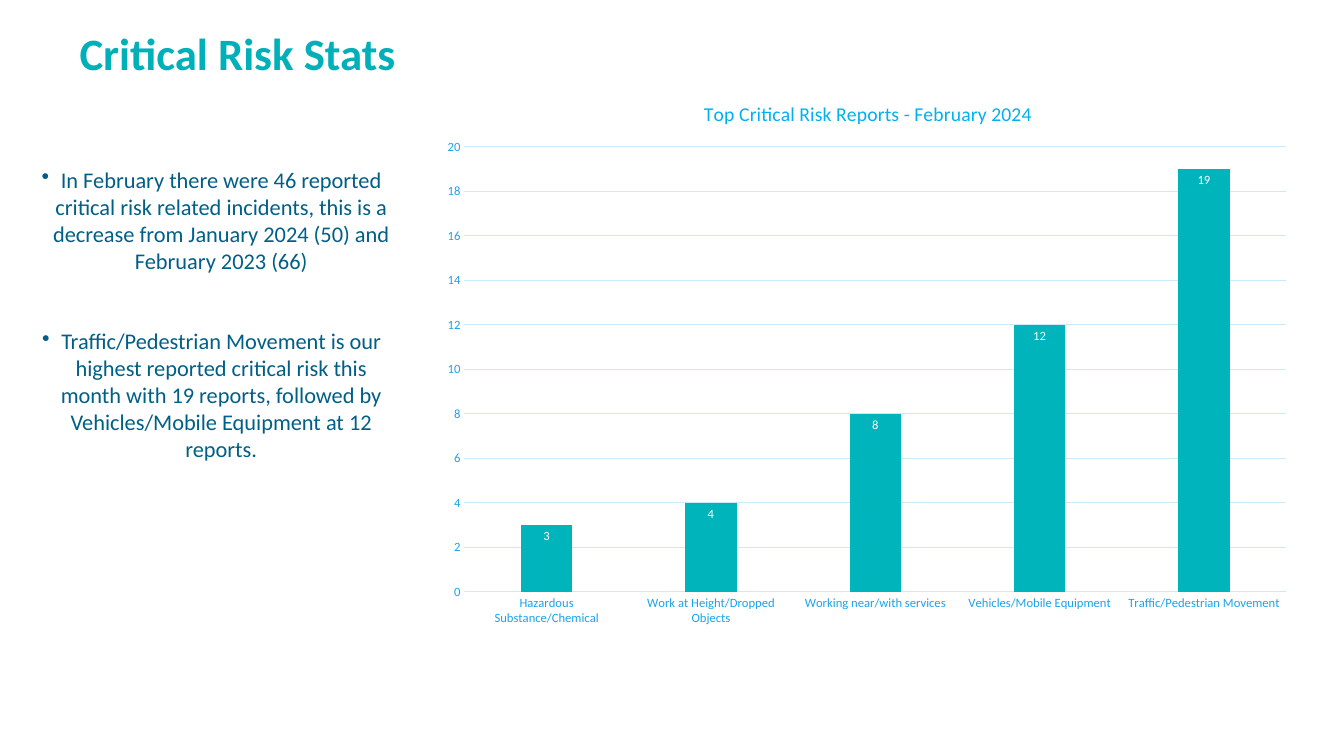
import pptx
import pptx.chart.data
import pptx.dml.color
import pptx.enum.chart
import pptx.enum.text
import pptx.oxml
import pptx.oxml.ns
import pptx.util
from pptx.util import Inches

COLORS = {
    "heading": "00B0B9",
    "body": "005F86",
    "bars": "00B4BC",
    "chart_title": "00B0F0",
    "chart_text": "0A5075",
    "axis_text": "1AA3EB",
    "grid": "CAEAFA",
    "label": "FFFFFF",
}
FONT = "Calibri"


def write(paragraph, text, *, size, color, bold=False, align=None, line=None,
          before=None, bullet_indent=None):
    """Fill a paragraph with one formatted run."""
    if bullet_indent:
        props = paragraph._p.get_or_add_pPr()
        props.set("marL", str(bullet_indent))
        props.set("indent", str(-bullet_indent))
        bullet = pptx.oxml.parse_xml(
            f'<a:buChar {pptx.oxml.ns.nsdecls("a")} char="•"/>')
        props.append(bullet)
    if align is not None:
        paragraph.alignment = align
    if line:
        paragraph.line_spacing = pptx.util.Pt(line)
    if before:
        paragraph.space_before = pptx.util.Pt(before)
    run = paragraph.add_run()
    run.text = text
    style_font(run.font, size, color, bold)


def style_font(font, size, color, bold=False):
    font.name = FONT
    font.size = pptx.util.Pt(size)
    font.bold = bold
    font.color.rgb = pptx.dml.color.RGBColor.from_string(COLORS[color])


presentation = pptx.Presentation()
presentation.slide_width = Inches(13.33)
presentation.slide_height = Inches(7.5)
slide = presentation.slides.add_slide(presentation.slide_layouts[6])

# Heading
heading = slide.shapes.add_textbox(
    Inches(0.69), Inches(0.3), Inches(11.95), Inches(0.93)).text_frame
heading.word_wrap = True
write(heading.paragraphs[0], "Critical Risk Stats", size=32, color="heading",
      bold=True, line=32)

# Findings
findings = slide.shapes.add_textbox(
    Inches(0.22), Inches(1.6), Inches(3.76), Inches(3.06)).text_frame
findings.word_wrap = True
finding_texts = [
    "In February there were 46 reported critical risk related incidents, "
    "this is a decrease from January 2024 (50) and February 2023 (66)",
    "Traffic/Pedestrian Movement is our highest reported critical risk this "
    "month with 19 reports, followed by Vehicles/Mobile Equipment at 12 reports.",
]
for index, finding in enumerate(finding_texts):
    paragraph = findings.add_paragraph() if index else findings.paragraphs[0]
    write(paragraph, finding, size=16, color="body",
          align=pptx.enum.text.PP_ALIGN.CENTER, before=38.5 * index,
          bullet_indent=Inches(0.19))

# Chart of reports by risk
reports = {
    "Hazardous Substance/Chemical": 3,
    "Work at Height/Dropped Objects": 4,
    "Working near/with services": 8,
    "Vehicles/Mobile Equipment": 12,
    "Traffic/Pedestrian Movement": 19,
}
report_data = pptx.chart.data.CategoryChartData()
report_data.categories = list(reports)
report_data.add_series("Series 1", list(reports.values()))
chart = slide.shapes.add_chart(
    pptx.enum.chart.XL_CHART_TYPE.COLUMN_CLUSTERED,
    Inches(4.26), Inches(0.74), Inches(8.67), Inches(5.52), report_data).chart
chart.has_legend = False
style_font(chart.font, 10, "chart_text")
chart.has_title = True
write(chart.chart_title.text_frame.paragraphs[0],
      "Top Critical Risk Reports - February 2024", size=14, color="chart_title")
chart.chart_title.include_in_layout = False

# Axes and gridlines
risk_axis, count_axis = chart.category_axis, chart.value_axis
for axis in (risk_axis, count_axis):
    axis.major_tick_mark = pptx.enum.chart.XL_TICK_MARK.NONE
    axis.minor_tick_mark = pptx.enum.chart.XL_TICK_MARK.NONE
    style_font(axis.tick_labels.font, 9, "axis_text")
count_axis.minimum_scale, count_axis.maximum_scale = 0, 20
count_axis.major_unit = 2
count_axis.format.line.fill.background()
count_axis.has_major_gridlines = True
for rule in (risk_axis.format.line, count_axis.major_gridlines.format.line):
    rule.width = pptx.util.Pt(0.75)
    rule.color.rgb = pptx.dml.color.RGBColor.from_string(COLORS["grid"])

# Bars and their values
bars = chart.plots[0]
bars.vary_by_categories = False
bars.gap_width = 219
bars.overlap = -27
bar_fill = bars.series[0].format.fill
bar_fill.solid()
bar_fill.fore_color.rgb = pptx.dml.color.RGBColor.from_string(COLORS["bars"])
bars.has_data_labels = True
bars.data_labels.show_value = True
bars.data_labels.position = pptx.enum.chart.XL_LABEL_POSITION.INSIDE_END
style_font(bars.data_labels.font, 9, "label")

# Fixed places of the plot area and chart title, as fractions of the chart
plot_area = chart._chartSpace.chart.plotArea
title_element = chart.chart_title._element
placements = [
    (plot_area, '<c:layoutTarget val="inner"/>',
     {"x": 0.04, "y": 0.13, "w": 0.94, "h": 0.8}),
    (title_element, "", {"x": 0.31, "y": 0.04}),
]
for element, target, fractions in placements:
    for old_layout in element.findall(pptx.oxml.ns.qn("c:layout")):
        element.remove(old_layout)
    modes = "".join(f'<c:{key}Mode val="edge"/>' for key in "xy")
    values = "".join(f'<c:{key} val="{value}"/>'
                     for key, value in fractions.items())
    layout = pptx.oxml.parse_xml(
        f'<c:layout {pptx.oxml.ns.nsdecls("c")}><c:manualLayout>'
        f'{target}{modes}{values}</c:manualLayout></c:layout>')
    element.insert(0 if element is plot_area else 1, layout)

presentation.save("out.pptx")
